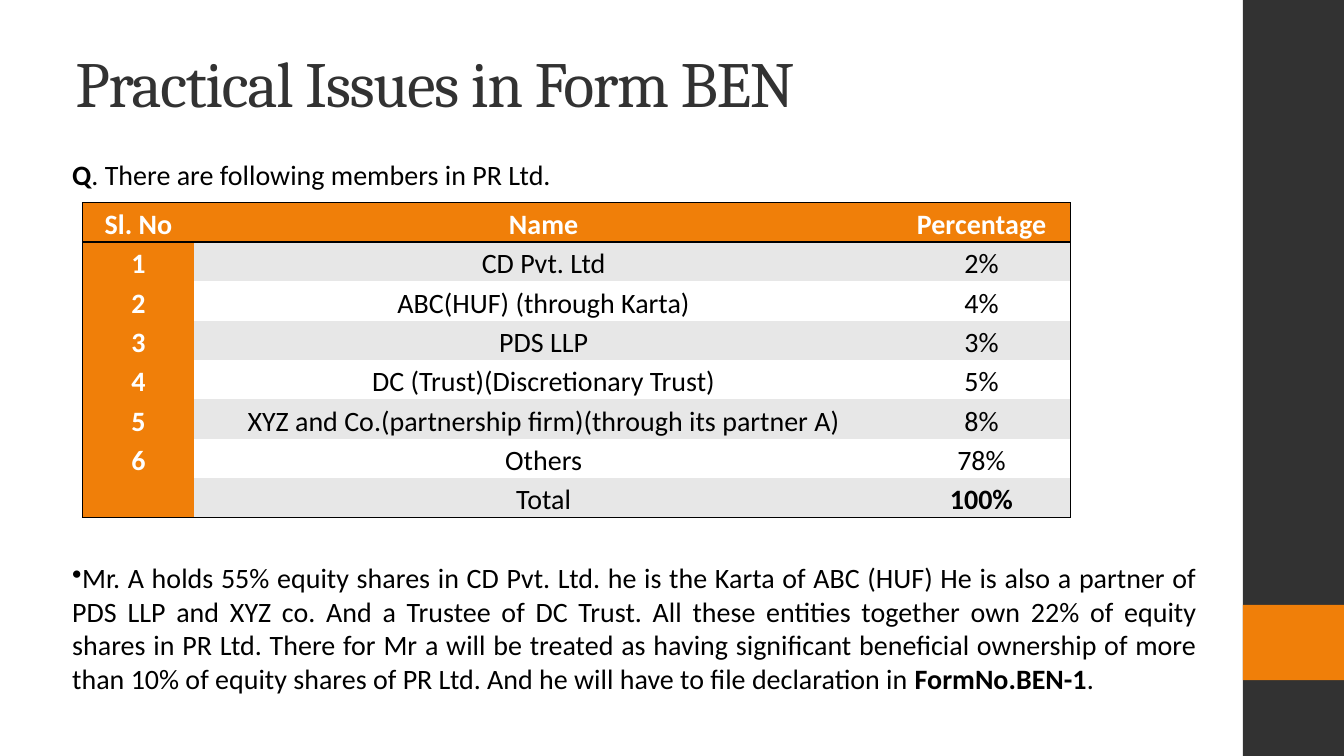
"""Build the slide on practical issues in Form BEN."""
from lxml.etree import SubElement
from pptx import Presentation
from pptx.dml.color import RGBColor
from pptx.enum.shapes import MSO_SHAPE
from pptx.enum.text import MSO_ANCHOR, PP_ALIGN
from pptx.oxml.ns import qn
from pptx.util import Cm, Pt

ORANGE, CHARCOAL, GRAY = "F07F09", "323232", "E7E7E7"
BLACK, WHITE = "000000", "FFFFFF"
NO_STYLE = "{2D5ABB26-0587-4C30-8999-92F81FD0307C}"


def paint(fill, color):
    fill.solid()
    fill.fore_color.rgb = RGBColor.from_string(color)


def write(paragraph, text, font="Calibri", size=20, color=BLACK, bold=False, spacing=0):
    run = paragraph.add_run()
    run.text = text
    run.font.name = font
    run.font.size = Pt(size)
    run.font.bold = bold
    paint(run.font.fill, color)
    if spacing:
        run.font._element.set("spc", str(spacing * 100))


presentation = Presentation()
presentation.slide_width = Cm(33.87)
presentation.slide_height = Cm(19.05)
slide = presentation.slides.add_slide(presentation.slide_layouts[6])

for top, height, color in [(0, 19.05, CHARCOAL), (15.24, 1.9, ORANGE)]:
    band = slide.shapes.add_shape(
        MSO_SHAPE.RECTANGLE, Cm(31.32), Cm(top), Cm(2.55), Cm(height))
    band.shadow.inherit = False
    band.line.fill.background()
    paint(band.fill, color)

title = slide.shapes.add_textbox(Cm(1.65), Cm(0.48), Cm(28.22), Cm(3.18)).text_frame
title.word_wrap = True
title.vertical_anchor = MSO_ANCHOR.MIDDLE
write(title.paragraphs[0], "Practical Issues in Form BEN",
      font="Cambria", size=46, color=CHARCOAL, spacing=-1)

body = slide.shapes.add_textbox(Cm(1.57), Cm(3.84), Cm(28.85), Cm(14.73)).text_frame
body.word_wrap = True
question = body.paragraphs[0]
write(question, "Q", bold=True)
write(question, ". There are following members in PR Ltd.")
answer = body.add_paragraph()
write(answer, "Mr. A holds 55% equity shares in CD Pvt. Ltd. he is the Karta of ABC (HUF) "
      "He is also a partner of PDS LLP and XYZ co. And a Trustee of DC Trust. "
      "All these entities together own 22% of equity shares in PR Ltd. "
      "There for Mr a will be treated as having significant beneficial ownership "
      "of more than 10% of equity shares of PR Ltd. "
      "And he will have to file declaration in ")
write(answer, "FormNo.BEN-1", bold=True)
write(answer, ".")
for paragraph in body.paragraphs:
    paragraph.alignment = PP_ALIGN.JUSTIFY
    paragraph.line_spacing = Pt(24)
answer.space_before = Pt(264)
SubElement(answer._p.get_or_add_pPr(), qn("a:buChar")).set("char", "•")

members = [
    ("Sl. No", "Name", "Percentage"),
    ("1", "CD Pvt. Ltd", "2%"),
    ("2", "ABC(HUF) (through Karta)", "4%"),
    ("3", "PDS LLP", "3%"),
    ("4", "DC (Trust)(Discretionary Trust)", "5%"),
    ("5", "XYZ and Co.(partnership firm)(through its partner A)", "8%"),
    ("6", "Others", "78%"),
    ("", "Total", "100%"),
]
column_widths = [2.82, 17.6, 4.47]
last_row, last_column = len(members) - 1, len(column_widths) - 1
table = slide.shapes.add_table(
    len(members), len(column_widths), Cm(2.08), Cm(5.11),
    Cm(sum(column_widths)), Cm(0.99 * len(members))).table
table._tbl.tblPr.find(qn("a:tableStyleId")).text = NO_STYLE
for column, width in zip(table.columns, column_widths):
    column.width = Cm(width)

for row, member in enumerate(members):
    for column, text in enumerate(member):
        cell = table.cell(row, column)
        cell.margin_left = cell.margin_right = Cm(0.17)
        cell.margin_top = cell.margin_bottom = 0
        heading = row == 0 or column == 0

        borders = {
            "a:lnL": 1 if column == 0 else 0,
            "a:lnR": 1 if column == last_column else 0,
            "a:lnT": 1 if row == 0 else 0,
            "a:lnB": 2 if row == 0 else 1 if row == last_row else 0,
        }
        properties = cell._tc.get_or_add_tcPr()
        for side, points in borders.items():
            if points:
                line = SubElement(properties, qn(side), w=str(Pt(points)))
                line_fill = SubElement(line, qn("a:solidFill"))
                SubElement(line_fill, qn("a:srgbClr"), val=BLACK)
        paint(cell.fill, ORANGE if heading else GRAY if row % 2 else WHITE)

        paragraph = cell.text_frame.paragraphs[0]
        paragraph.alignment = PP_ALIGN.CENTER
        paragraph.line_spacing = 1.15
        if text:
            write(paragraph, text, color=WHITE if heading else BLACK,
                  bold=heading or text == "100%")

presentation.save("out.pptx")
